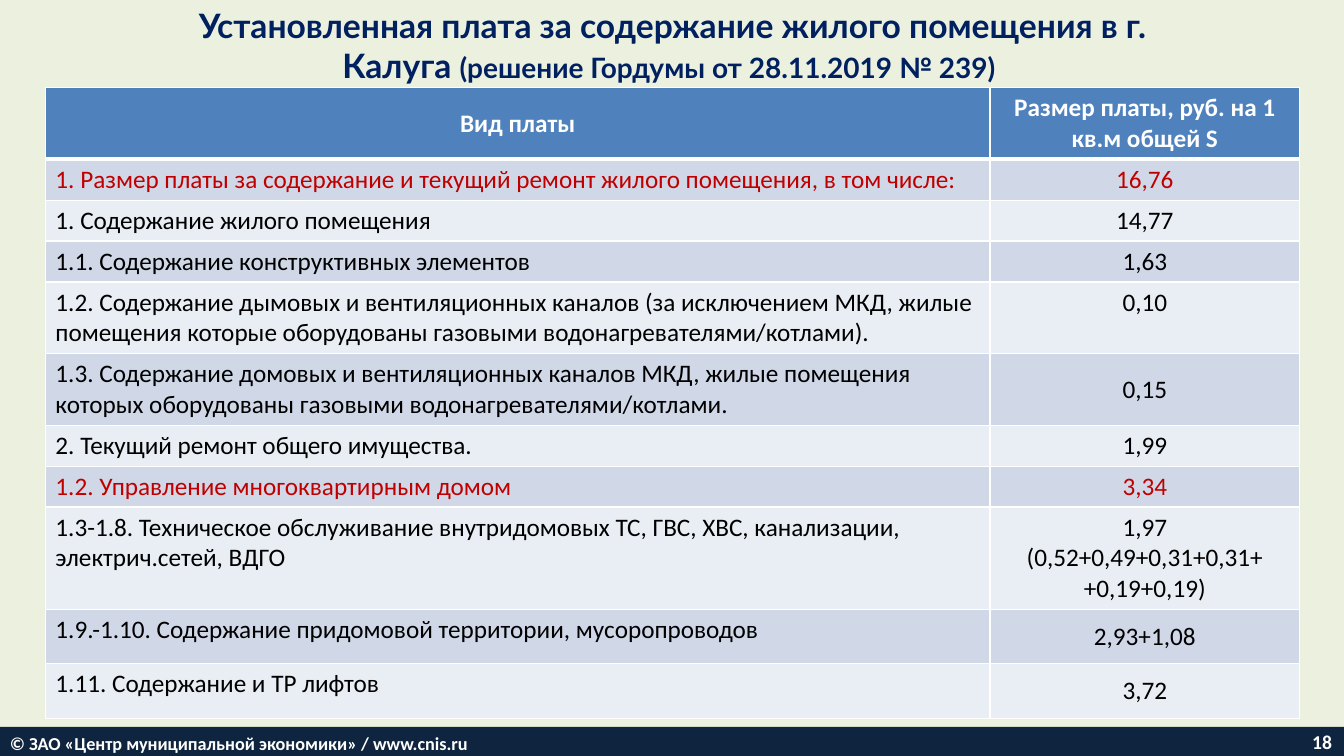
"""Build a slide with the table of housing maintenance charges in Kaluga."""
import pptx
import pptx.dml.color
import pptx.enum.shapes
import pptx.enum.text
import pptx.oxml
import pptx.oxml.ns
import pptx.util

Inches = pptx.util.Inches
ALIGN = pptx.enum.text.PP_ALIGN
ANCHOR = pptx.enum.text.MSO_ANCHOR
THEME = {
    "background": "EBF1DE", "title": "002060", "header": "4F81BD",
    "bands": ("D0D8E8", "E9EDF4"), "accent": "C00000", "text": "000000",
    "white": "FFFFFF", "footer": "0F243E",
    "title_font": "Lato", "body_font": "Calibri",
    "title_size": 24, "subtitle_size": 20, "table_size": 18, "footer_size": 13, "number_size": 14,
}


def write(paragraph, text, size, color, bold=True, font="body_font"):
    """Add a formatted run to a paragraph."""
    run = paragraph.add_run()
    run.text = text
    values = {"name": THEME[font], "size": pptx.util.Pt(THEME[size]), "bold": bold}
    for name, value in values.items():
        setattr(run.font, name, value)
    run.font.color.rgb = pptx.dml.color.RGBColor.from_string(THEME[color])


def paint(fill, color):
    """Give a fill one solid colour."""
    fill.solid()
    fill.fore_color.rgb = pptx.dml.color.RGBColor.from_string(color)


presentation = pptx.Presentation()
presentation.slide_width = Inches(13.33)
presentation.slide_height = Inches(7.5)
slide = presentation.slides.add_slide(presentation.slide_layouts[5])
paint(slide.background.fill, THEME["background"])

title = slide.shapes.title
for name, value in {"left": 1.67, "top": 0, "width": 10, "height": 0.84}.items():
    setattr(title, name, Inches(value))
title_format = {"word_wrap": True, "auto_size": pptx.enum.text.MSO_AUTO_SIZE.NONE,
                "vertical_anchor": ANCHOR.TOP}
for name, value in title_format.items():
    setattr(title.text_frame, name, value)
paragraph = title.text_frame.paragraphs[0]
paragraph.alignment = ALIGN.CENTER
write(paragraph, "Установленная плата за содержание жилого помещения в г. Калуга ",
      "title_size", "title", font="title_font")
write(paragraph, "(решение Гордумы от 28.11.2019 № 239) ",
      "subtitle_size", "title", font="title_font")

charges = [
    (0.68, "Вид платы", "Размер платы, руб. на 1 кв.м общей S"),
    (0.39, "1. Размер платы за содержание и текущий ремонт жилого помещения, в том числе:", "16,76"),
    (0.39, "1. Содержание жилого помещения", "14,77"),
    (0.39, "1.1. Содержание конструктивных элементов", "1,63"),
    (0.68, "1.2. Содержание дымовых и вентиляционных каналов (за исключением МКД, жилые помещения "
           "которые оборудованы газовыми водонагревателями/котлами).", "0,10"),
    (0.68, "1.3. Содержание домовых и вентиляционных каналов МКД, жилые помещения "
           "которых оборудованы газовыми водонагревателями/котлами.", "0,15"),
    (0.39, "2. Текущий ремонт общего имущества.", "1,99"),
    (0.39, "1.2. Управление многоквартирным домом", "3,34"),
    (0.97, "1.3-1.8. Техническое обслуживание внутридомовых ТС, ГВС, ХВС, канализации, "
           "электрич.сетей, ВДГО", "1,97\n(0,52+0,49+0,31+0,31+\n+0,19+0,19)"),
    (0.54, "1.9.-1.10. Содержание придомовой территории, мусоропроводов", "2,93+1,08"),
    (0.54, "1.11. Содержание и ТР лифтов", "3,72"),
]
highlighted_rows = (1, 7)
top_anchored_amounts = (4, 8)

table = slide.shapes.add_table(len(charges), 2, Inches(0.45), Inches(0.87),
                               Inches(12.44), Inches(6.18)).table
for column, width in zip(table.columns, (9.37, 3.07)):
    column.width = Inches(width)

for row_index, (height, *texts) in enumerate(charges):
    table.rows[row_index].height = Inches(height)
    is_header = row_index == 0
    fill = THEME["header"] if is_header else THEME["bands"][(row_index - 1) % 2]
    color = "white" if is_header else "accent" if row_index in highlighted_rows else "text"
    for column_index, text in enumerate(texts):
        cell = table.cell(row_index, column_index)
        properties = cell._tc.get_or_add_tcPr()
        for side in "LRTB":
            thick = (row_index, side) in ((0, "B"), (1, "T"))
            properties.append(pptx.oxml.parse_xml(
                f'<a:ln{side} {pptx.oxml.ns.nsdecls("a")} w="{pptx.util.Pt(3 if thick else 1)}">'
                f'<a:solidFill><a:srgbClr val="{THEME["white"]}"/></a:solidFill></a:ln{side}>'))
        paint(cell.fill, fill)
        is_amount = column_index == 1
        centred = is_header or is_amount and row_index not in top_anchored_amounts
        cell.vertical_anchor = ANCHOR.MIDDLE if centred else ANCHOR.TOP
        for line_index, line in enumerate(text.split("\n")):
            frame = cell.text_frame
            paragraph = frame.add_paragraph() if line_index else frame.paragraphs[0]
            paragraph.alignment = ALIGN.CENTER if is_header or is_amount else ALIGN.LEFT
            write(paragraph, line, "table_size", color, bold=is_header)

footer = slide.shapes.add_shape(pptx.enum.shapes.MSO_SHAPE.RECTANGLE,
                                Inches(0), Inches(7.21), Inches(13.33), Inches(0.32))
footer.shadow.inherit = False
paint(footer.fill, THEME["footer"])
footer.line.fill.background()
number = slide.shapes.add_textbox(Inches(10.98), Inches(7.21), Inches(2.33), Inches(0.3))
footer_texts = [
    (footer, "© ЗАО «Центр муниципальной экономики» / www.cnis.ru", "footer_size", ALIGN.LEFT),
    (number, "18", "number_size", ALIGN.RIGHT),
]
for shape, text, size, alignment in footer_texts:
    shape.text_frame.word_wrap = True
    shape.text_frame.vertical_anchor = ANCHOR.MIDDLE
    paragraph = shape.text_frame.paragraphs[0]
    paragraph.alignment = alignment
    write(paragraph, text, size, "white")

presentation.save("out.pptx")
